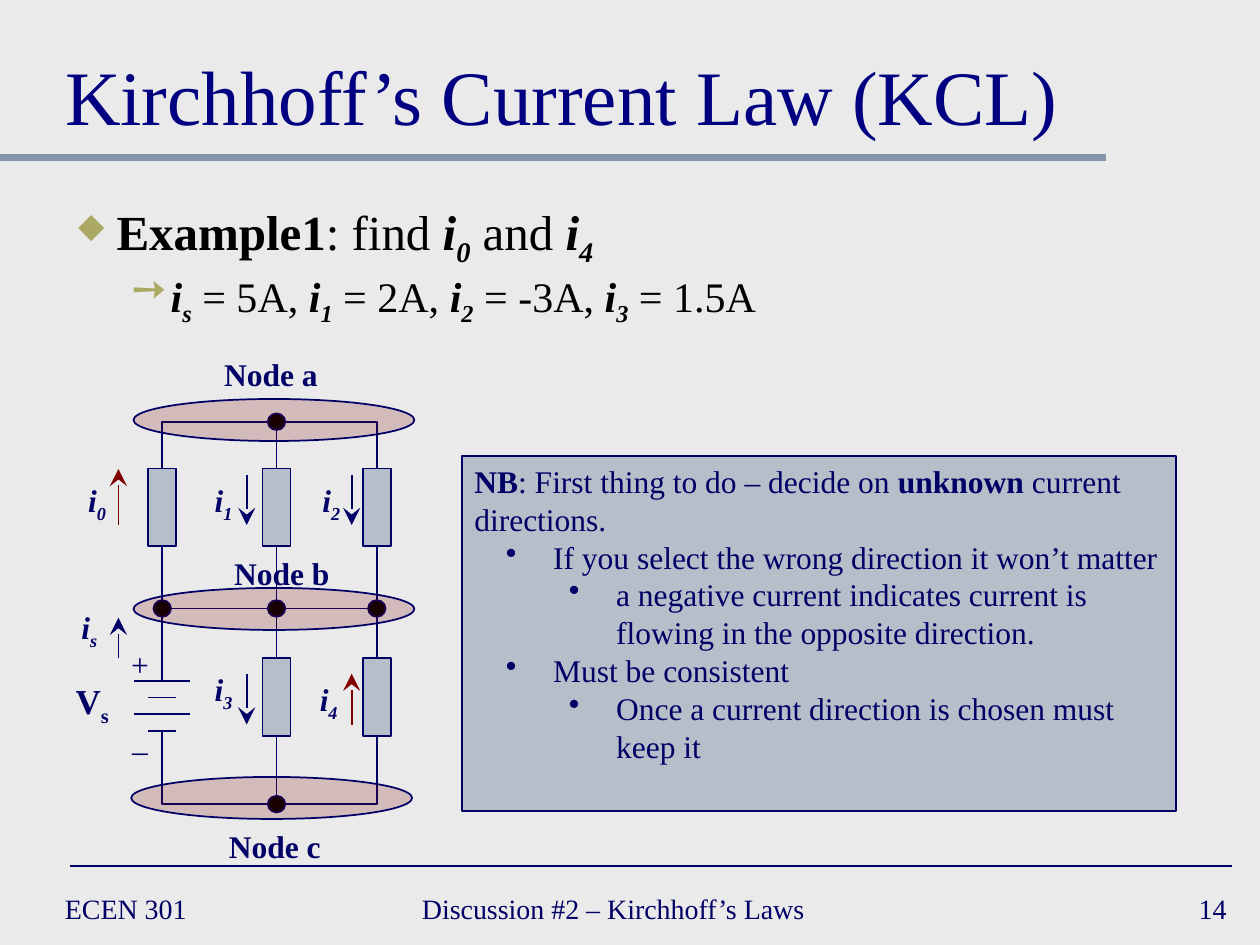
from lxml.etree import SubElement
from pptx import Presentation
from pptx.dml.color import RGBColor
from pptx.enum.shapes import MSO_CONNECTOR, MSO_SHAPE
from pptx.enum.text import MSO_ANCHOR as ANCHOR, MSO_AUTO_SIZE, PP_ALIGN as ALIGN
from pptx.oxml.ns import qn
from pptx.util import Pt

FONT = "Times New Roman"
NAVY, STEEL, MAROON, BLACK = "000066", "8495A9", "800000", "000000"


def color(hex_value):
    """Turn a hex string into a colour."""
    return RGBColor.from_string(hex_value)


def add_line(slide, start, end, ink=NAVY, width=1, arrow=False):
    """Draw a straight line, with an arrowhead at its end if asked."""
    line = slide.shapes.add_connector(
        MSO_CONNECTOR.STRAIGHT, *(Pt(value) for value in (*start, *end)))
    line.line.color.rgb = color(ink)
    line.line.width = Pt(width)
    properties = line._element.spPr
    if arrow:
        SubElement(properties.find(qn("a:ln")), qn("a:tailEnd"),
                   type="stealth", w="lg", len="lg")
    SubElement(properties, qn("a:effectLst"))
    return line


def add_corner(slide, start, end):
    """Draw a wire that runs level from start, then upright to end."""
    builder = slide.shapes.build_freeform(Pt(start[0]), Pt(start[1]))
    builder.add_line_segments(
        [(Pt(end[0]), Pt(start[1])), (Pt(end[0]), Pt(end[1]))], close=False)
    wire = builder.convert_to_shape()
    wire.shadow.inherit = False
    wire.fill.background()
    wire.line.color.rgb = color(NAVY)
    wire.line.width = Pt(1)


def add_filled(slide, kind, box, fill, opacity=100):
    """Draw a navy-edged preset shape with a see-through fill."""
    shape = slide.shapes.add_shape(kind, *(Pt(value) for value in box))
    shape.shadow.inherit = False
    shape.fill.solid()
    shape.fill.fore_color.rgb = color(fill)
    if opacity < 100:
        tone = shape._element.spPr.find(qn("a:solidFill"))[0]
        SubElement(tone, qn("a:alpha"), val=str(opacity * 1000))
    shape.line.color.rgb = color(NAVY)
    shape.line.width = Pt(1)
    return shape


def write_runs(paragraph, pieces, size, ink=NAVY):
    """Write (text, style) pieces; b is bold, i italic, _ subscript."""
    for text, style in pieces:
        run = paragraph.add_run()
        run.text = text
        run.font.name, run.font.size = FONT, Pt(size)
        run.font.color.rgb = color(ink)
        run.font.bold, run.font.italic = "b" in style, "i" in style
        if "_" in style:
            run._r.get_or_add_rPr().set("baseline", "-25000")


def set_bullet(paragraph, symbol, margin, hang, ink=NAVY, percent=100):
    """Give a paragraph a hanging bullet."""
    properties = paragraph._p.get_or_add_pPr()
    properties.set("marL", str(Pt(margin)))
    properties.set("indent", str(-Pt(hang)))
    SubElement(SubElement(properties, qn("a:buClr")), qn("a:srgbClr"), val=ink)
    SubElement(properties, qn("a:buSzPct"), val=str(percent * 1000))
    SubElement(properties, qn("a:buChar"), char=symbol)


def add_text(slide, box, pieces, size, align=ALIGN.LEFT, anchor=ANCHOR.TOP):
    """Add a one-line text box."""
    frame = slide.shapes.add_textbox(*(Pt(value) for value in box)).text_frame
    frame.word_wrap = False
    frame.vertical_anchor = anchor
    frame.paragraphs[0].alignment = align
    write_runs(frame.paragraphs[0], pieces, size)


def build_title(slide, left, top, width, height):
    """Format the title and draw the rule below it."""
    title = slide.shapes.title
    title.left, title.top, title.width, title.height = map(Pt, (left, top, width, height))
    frame = title.text_frame
    frame.text = "Kirchhoff’s Current Law (KCL)"
    frame.auto_size = MSO_AUTO_SIZE.NONE
    frame.vertical_anchor = ANCHOR.BOTTOM
    heading = frame.paragraphs[0]
    heading.alignment = ALIGN.LEFT
    font = heading.runs[0].font
    font.name, font.size = FONT, Pt(44)
    font.color.rgb = color("000080")
    add_line(slide, (0, top + height + 6), (632, top + height + 6), STEEL, 4)


def build_footer(slide, left, top, width, height):
    """Draw the footer rule, course, topic and page number."""
    add_line(slide, (left + 10, top - 9), (left + width - 4, top - 9))
    for offset, part_width, text, align in (
            (0, 156, "ECEN 301", ALIGN.LEFT),
            (204, 276, "Discussion #2 – Kirchhoff’s Laws", ALIGN.LEFT),
            (width - 150, 150, "14", ALIGN.RIGHT)):
        add_text(slide, (left + offset, top, part_width, height), [(text, "")],
                 16, align, ANCHOR.MIDDLE)


def build_example(slide, left, top, width, height):
    """Write the task and the known currents."""
    frame = slide.shapes.add_textbox(*map(Pt, (left, top, width, height))).text_frame
    frame.word_wrap = True
    task = [("Example1", "b"), (": find ", ""), ("i", "bi"), ("0", "bi_"),
            (" and ", ""), ("i", "bi"), ("4", "bi_")]
    currents = [piece for index, value in (
        ("s", " = 5A, "), ("1", " = 2A, "), ("2", " = -3A, "), ("3", " = 1.5A"))
        for piece in (("i", "bi"), (index, "bi_"), (value, ""))]
    for paragraph, pieces, size, symbol, percent, margin, hang, before in (
            (frame.paragraphs[0], task, 28, "◆", 70, 28, 22, 0),
            (frame.add_paragraph(), currents, 24, "➙", 100, 59, 22.5, 4.8)):
        paragraph.line_spacing = 0.9
        paragraph.space_before = Pt(before)
        set_bullet(paragraph, symbol, margin, hang, "ACA964", percent)
        write_runs(paragraph, pieces, size, BLACK)


def build_circuit(slide, left, top):
    """Draw the three-node circuit with its current arrows and labels."""
    first, middle, last = columns = [left + x for x in (56.7, 122, 179.3)]
    node_a, node_b, node_c = [top + y for y in (43, 149.7, 261.5)]
    upper, lower, resistor_height = top + 69.7, top + 178, 44.5
    battery, plate_gap = top + 191, 9.6
    battery_end = battery + 3 * plate_gap

    for row, above, below, row_columns in (
            (upper, node_a, node_b, columns), (lower, node_b, node_c, columns[1:])):
        for x in row_columns:
            resistor = add_filled(slide, MSO_SHAPE.RECTANGLE,
                                  (x - 8, row, 16, resistor_height), STEEL, 50)
            if above == node_b or x == middle:
                add_line(slide, (x, above), (x, row)).end_connect(resistor, 0)
            if below == node_b or x == middle:
                add_line(slide, (x, below), (x, row + resistor_height)).end_connect(resistor, 2)
    for start_y, end in ((node_a, (first, upper)), (node_a, (last, upper)),
                         (node_c, (last, lower + resistor_height)),
                         (node_c, (first, battery_end))):
        add_corner(slide, (middle, start_y), end)
    for start, end in ((first, middle), (middle, last)):
        add_line(slide, (start, node_b), (end, node_b))
    add_line(slide, (first, node_b), (first, battery))
    for plate in range(4):
        half, y = (8 if plate % 2 else 16), battery + plate * plate_gap
        add_line(slide, (first - half, y), (first + half, y))
    for x, y in [(x, node_b) for x in columns] + [(middle, node_a), (middle, node_c)]:
        add_filled(slide, MSO_SHAPE.OVAL, (x - 5, y - 4.75, 10, 9.5), BLACK)

    for index, x, start, end, ink, label_x, label_y in (
            ("s", 31.7, 178, 155, NAVY, 15, 146),
            ("0", 31.7, 102, 70, MAROON, 19.5, 73.4),
            ("1", 105, 73.4, 102, NAVY, 91.8, 73.4),
            ("2", 165, 73.4, 102, NAVY, 153.3, 73.4),
            ("3", 105, 187, 216, NAVY, 91.8, 181.4),
            ("4", 165, 216, 187, MAROON, 151.8, 187)):
        add_line(slide, (left + x, top + start), (left + x, top + end), ink, arrow=True)
        add_text(slide, (left + label_x - 20, top + label_y, 40, 29),
                 [("i", "bi"), (index, "bi_")], 18, ALIGN.CENTER)
    for node in range(3):
        add_filled(slide, MSO_SHAPE.OVAL,
                   (left + (39 if node == 2 else 40.3), top + 30 + node * 108, 160.5, 24),
                   MAROON, 20)
    for pieces, size, center, y in (
            ([("Node a", "b")], 18, 118.8, 1.4), ([("Node b", "b")], 18, 125, 115),
            ([("Node c", "b")], 18, 121, 271), ([("+", "")], 18, 44, 167),
            ([("_", "")], 18, 44, 210), ([("V", "b"), ("s", "b_")], 20, 16.7, 187)):
        add_text(slide, (left + center - 45, top + y, 90, 29), pieces, size, ALIGN.CENTER)


def build_advice(slide, left, top, width, height):
    """Write the note on choosing current directions."""
    panel = add_filled(slide, MSO_SHAPE.RECTANGLE, (left, top, width, height), STEEL, 50)
    frame = panel.text_frame
    frame.word_wrap = True
    frame.vertical_anchor = ANCHOR.TOP
    opening = frame.paragraphs[0]
    opening.alignment = ALIGN.LEFT
    write_runs(opening, [("NB", "b"), (": First thing to do – decide on ", ""),
                         ("unknown", "b"), (" current directions.", "")], 18)
    for level, text in (
            (1, "If you select the wrong direction it won’t matter"),
            (2, "a negative current indicates current is flowing in the opposite direction."),
            (1, "Must be consistent"),
            (2, "Once a current direction is chosen must keep it")):
        point = frame.add_paragraph()
        point.level = level
        point.alignment = ALIGN.LEFT
        set_bullet(point, "•", 36 * level + 9, 27)
        write_runs(point, [(text, "")], 18)


def main():
    """Build and save the slide."""
    deck = Presentation()
    deck.slide_width, deck.slide_height = Pt(720), Pt(540)
    slide = deck.slides.add_slide(deck.slide_layouts[5])
    slide.background.fill.solid()
    slide.background.fill.fore_color.rgb = color("EAEAEA")
    build_title(slide, 30, 12, 660, 72)
    build_footer(slide, 30, 504, 678, 30)
    build_example(slide, 31.5, 112, 658, 75)
    build_circuit(slide, 36, 198)
    build_advice(slide, 264, 260.5, 408, 203)
    deck.save("out.pptx")


if __name__ == "__main__":
    main()
